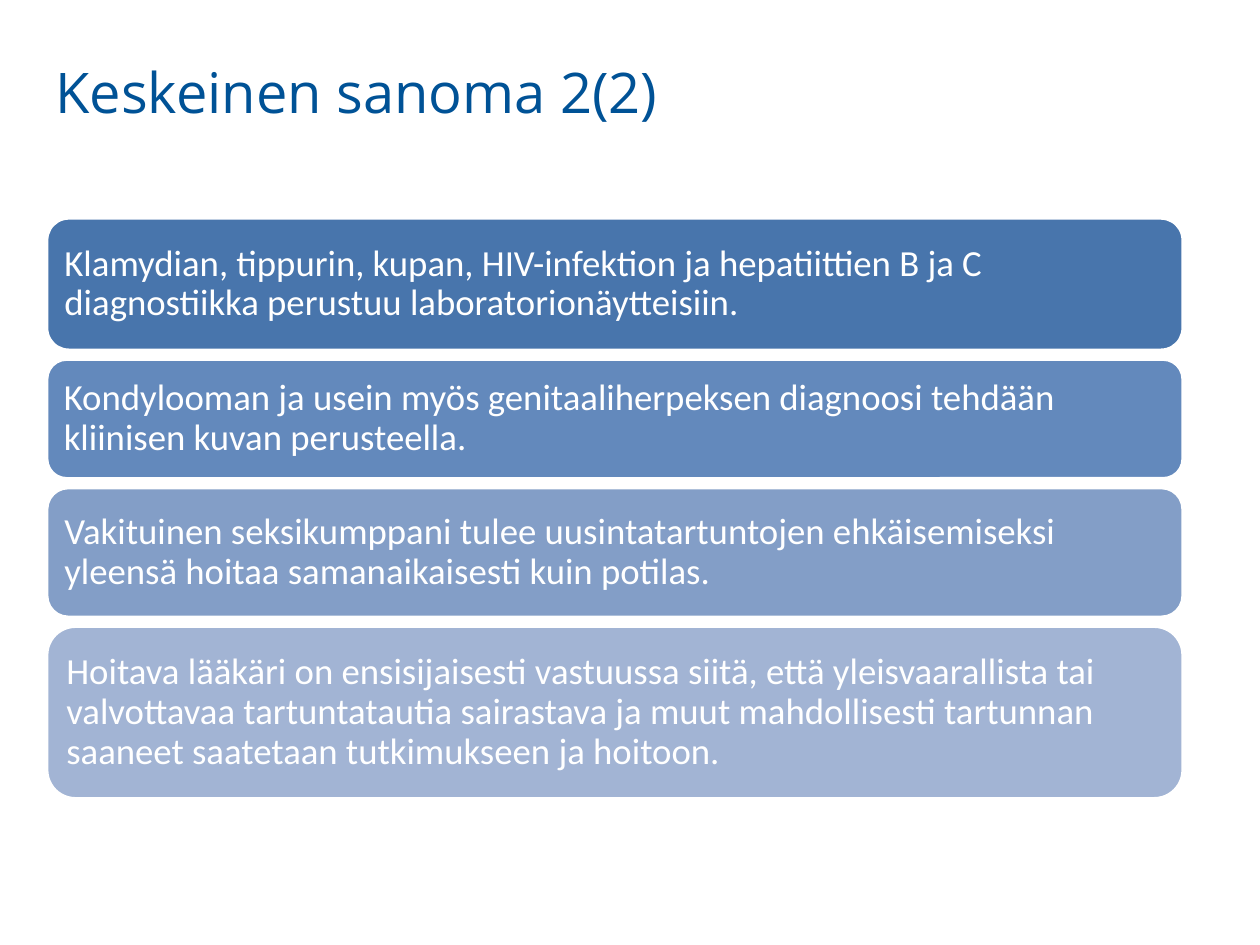
import pptx
import pptx.util
import pptx.dml.color
import pptx.enum.shapes
import pptx.enum.text
from dataclasses import dataclass

Inches = pptx.util.Inches
ANCHOR = pptx.enum.text.MSO_ANCHOR


@dataclass(frozen=True)
class Theme:
    title_color: str = "005296"
    white: str = "FFFFFF"
    title_font: str = "Open Sans"
    body_font: str = "Calibri"
    title_size: int = 32
    body_size: int = 21


THEME = Theme()
TITLE = "Keskeinen sanoma 2(2)"

# text, fill, height in inches
MESSAGES = [
    ("Klamydian, tippurin, kupan, HIV-infektion ja hepatiittien B ja C "
     "diagnostiikka perustuu laboratorionäytteisiin.", "4875AC", 1.05),
    ("Kondylooman ja usein myös genitaaliherpeksen diagnoosi tehdään "
     "kliinisen kuvan perusteella.", "6389BC", 0.95),
    ("Vakituinen seksikumppani tulee uusintatartuntojen ehkäisemiseksi "
     "yleensä hoitaa samanaikaisesti kuin potilas.", "839EC7", 1.03),
    ("Hoitava lääkäri on ensisijaisesti vastuussa siitä, että yleisvaarallista tai "
     "valvottavaa tartuntatautia sairastava ja muut mahdollisesti tartunnan "
     "saaneet saatetaan tutkimukseen ja hoitoon.", "A2B4D4", 1.37),
]
LEFT, WIDTH = 0.37, 9.02
TITLE_TOP, TITLE_HEIGHT = 0.44, 1.26
CARDS_TOP, GAP = 1.73, 0.07


def rgb(value):
    return pptx.dml.color.RGBColor.from_string(value)


def set_text(sp, text, *, font, size, color, anchor, inset_x, inset_y, spacing=1.0):
    tf = sp.text_frame
    tf.word_wrap = True
    tf.auto_size = pptx.enum.text.MSO_AUTO_SIZE.NONE
    tf.vertical_anchor = anchor
    tf.margin_left = tf.margin_right = Inches(inset_x)
    tf.margin_top = tf.margin_bottom = Inches(inset_y)
    p = tf.paragraphs[0]
    p.alignment = pptx.enum.text.PP_ALIGN.LEFT
    p.line_spacing = spacing
    r = p.add_run()
    r.text = text
    r.font.name = font
    r.font.size = pptx.util.Pt(size)
    r.font.color.rgb = rgb(color)


def add_card(s, text, fill, top, height):
    sp = s.shapes.add_shape(
        pptx.enum.shapes.MSO_SHAPE.ROUNDED_RECTANGLE,
        Inches(LEFT), Inches(top), Inches(WIDTH), Inches(height))
    sp.shadow.inherit = False
    sp.fill.solid()
    sp.fill.fore_color.rgb = rgb(fill)
    sp.line.color.rgb = rgb(THEME.white)
    sp.line.width = pptx.util.Pt(2)
    set_text(sp, text, font=THEME.body_font, size=THEME.body_size, color=THEME.white,
             anchor=ANCHOR.MIDDLE, inset_x=0.09, inset_y=0.09, spacing=0.9)


def main():
    prs = pptx.Presentation()
    prs.slide_width, prs.slide_height = Inches(10), Inches(7.5)
    s = prs.slides.add_slide(prs.slide_layouts.get_by_name("Title Only"))

    title = s.shapes.title
    title.left, title.top = Inches(LEFT), Inches(TITLE_TOP)
    title.width, title.height = Inches(WIDTH), Inches(TITLE_HEIGHT)
    set_text(title, TITLE, font=THEME.title_font, size=THEME.title_size,
             color=THEME.title_color, anchor=ANCHOR.TOP, inset_x=0.07, inset_y=0.02)

    top = CARDS_TOP
    for text, fill, height in MESSAGES:
        add_card(s, text, fill, top, height)
        top += height + GAP

    prs.save("out.pptx")


if __name__ == "__main__":
    main()
